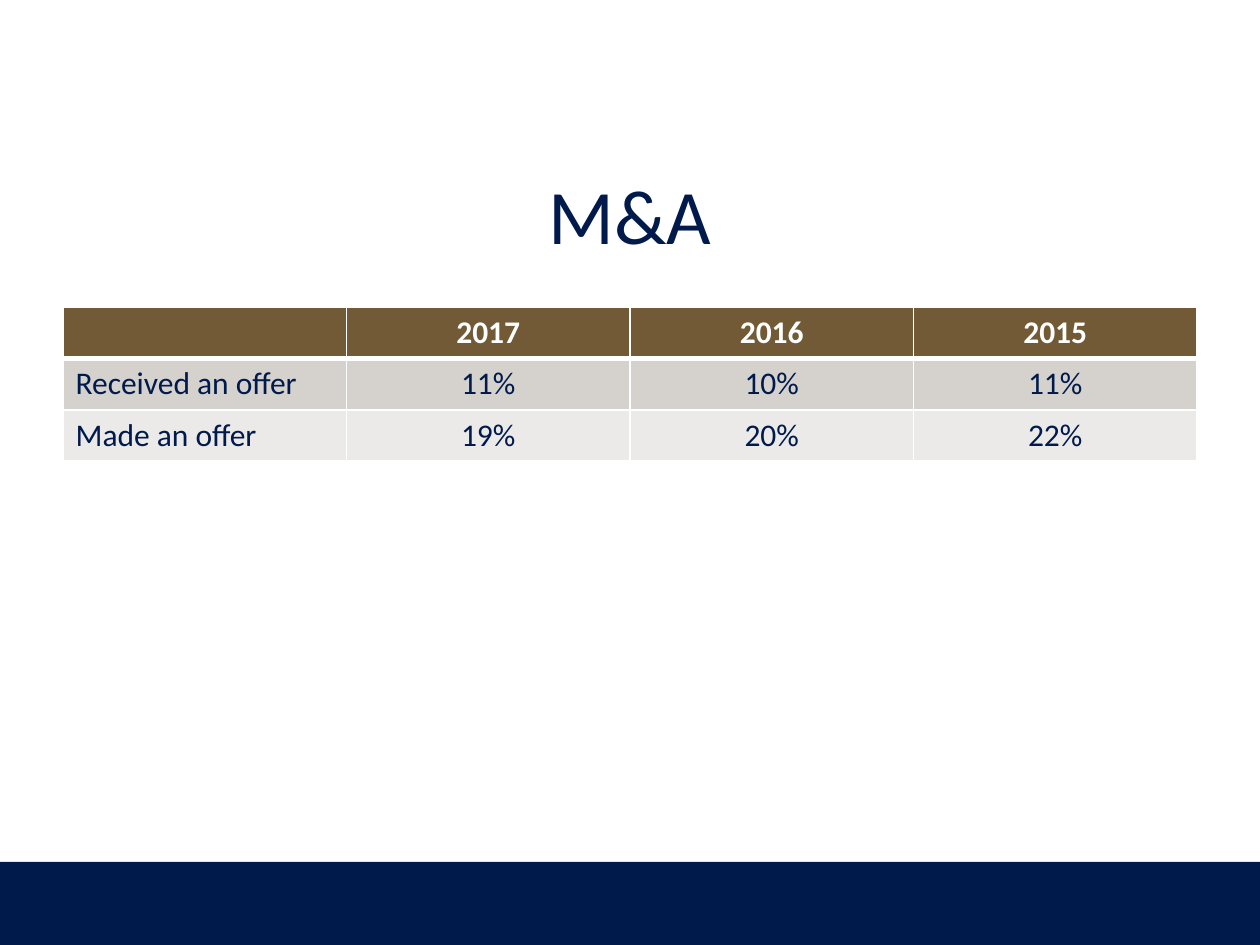
import pptx
import pptx.util
import pptx.dml.color
import pptx.enum.shapes
import pptx.enum.text
import pptx.oxml.ns
from lxml import etree

Inches = pptx.util.Inches
Align = pptx.enum.text.PP_ALIGN
Anchor = pptx.enum.text.MSO_ANCHOR

COLORS = {
    "navy": "001A4B",
    "brown": "715A35",
    "band_dark": "D5D2CE",
    "band_light": "EBEAE8",
    "white": "FFFFFF",
}
ROWS = [
    ["", "2017", "2016", "2015"],
    ["Received an offer", "11%", "10%", "11%"],
    ["Made an offer", "19%", "20%", "22%"],
]
ROW_FILLS = ["brown", "band_dark", "band_light"]


def color(name):
    return pptx.dml.color.RGBColor.from_string(COLORS[name])


def add_border(cell, side, points):
    qn = pptx.oxml.ns.qn
    properties = cell._tc.get_or_add_tcPr()
    line = etree.SubElement(properties, qn(f"a:ln{side}"), w=str(pptx.util.Pt(points)))
    fill = etree.SubElement(line, qn("a:solidFill"))
    etree.SubElement(fill, qn("a:srgbClr"), val=COLORS["white"])


deck = pptx.Presentation()
deck.slide_width = Inches(10)
deck.slide_height = Inches(7.5)
page = deck.slides.add_slide(deck.slide_layouts[6])
page.background.fill.solid()
page.background.fill.fore_color.rgb = color("white")

footer = page.shapes.add_shape(
    pptx.enum.shapes.MSO_SHAPE.RECTANGLE, Inches(0), Inches(6.84), Inches(10), Inches(0.66)
)
footer.shadow.inherit = False
footer.fill.solid()
footer.fill.fore_color.rgb = color("navy")
footer.line.fill.background()

title = page.shapes.add_textbox(Inches(0.5), Inches(1.07), Inches(9), Inches(1.25))
title.text_frame.word_wrap = True
title.text_frame.vertical_anchor = Anchor.MIDDLE
title.text_frame.text = "M&A"
para = title.text_frame.paragraphs[0]
para.alignment = Align.CENTER
span = para.runs[0]
span.font.name = "Calibri"
span.font.size = pptx.util.Pt(44)
span.font.color.rgb = color("navy")

table = page.shapes.add_table(
    len(ROWS), len(ROWS[0]), Inches(0.5), Inches(2.44), Inches(9), Inches(1.22)
).table
for column in table.columns:
    column.width = Inches(2.25)

for row_index, values in enumerate(ROWS):
    is_header = row_index == 0
    for column_index, value in enumerate(values):
        cell = table.cell(row_index, column_index)
        add_border(cell, "L", 1)
        add_border(cell, "R", 1)
        add_border(cell, "T", 3 if row_index == 1 else 1)
        add_border(cell, "B", 3 if is_header else 1)
        cell.fill.solid()
        cell.fill.fore_color.rgb = color(ROW_FILLS[row_index])
        cell.text_frame.text = value
        para = cell.text_frame.paragraphs[0]
        para.alignment = Align.CENTER if column_index else Align.LEFT
        para.font.size = pptx.util.Pt(18)
        for span in para.runs:
            span.font.name = "Calibri"
            span.font.size = pptx.util.Pt(18)
            span.font.bold = is_header
            span.font.color.rgb = color("white" if is_header else "navy")

deck.save("out.pptx")
